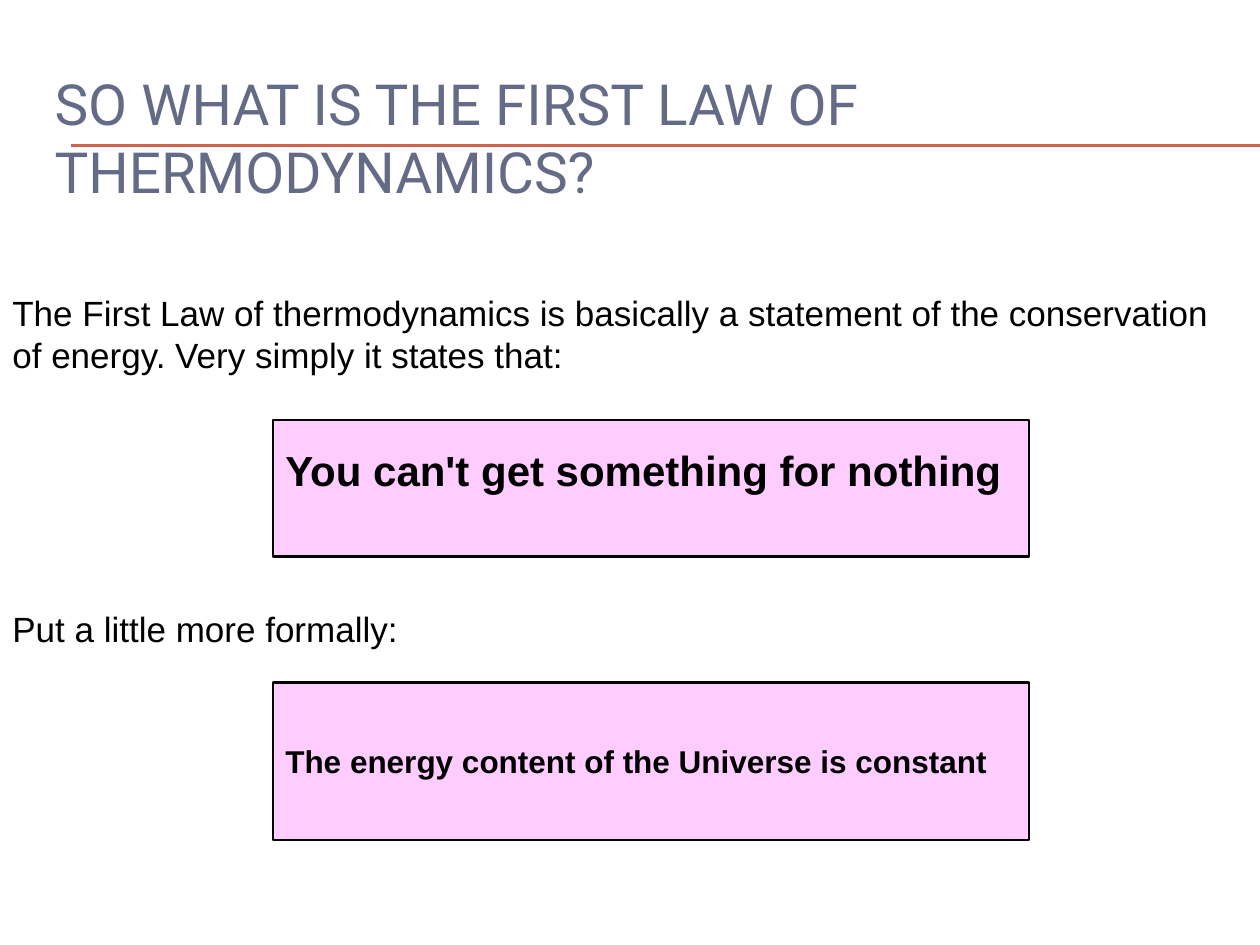
"""Build the slide on the first law of thermodynamics."""
from dataclasses import dataclass

from lxml.etree import SubElement
from pptx import Presentation
from pptx.dml.color import RGBColor
from pptx.enum.shapes import MSO_CONNECTOR, MSO_SHAPE
from pptx.enum.text import MSO_ANCHOR, MSO_AUTO_SIZE, PP_ALIGN
from pptx.oxml.ns import qn
from pptx.util import Pt


@dataclass(frozen=True)
class Theme:
    """Colours, fonts and type sizes."""
    heading: str = "646B86"
    ink: str = "000000"
    panel: str = "FFCCFF"
    rule: str = "D16349"
    heading_font: str = "Roboto"
    body_font: str = "Arial"
    heading_size: float = 32.4
    motto_size: float = 24
    body_size: float = 20
    formal_size: float = 18


def write(frame, text, *, size, color, font, bold=False, bottom=3.6):
    """Fill a text frame with one left-aligned, vertically centred paragraph."""
    frame.word_wrap = True
    frame.auto_size = MSO_AUTO_SIZE.NONE
    frame.vertical_anchor = MSO_ANCHOR.MIDDLE
    frame.margin_left = frame.margin_right = Pt(7.2)
    frame.margin_top, frame.margin_bottom = Pt(3.6), Pt(bottom)
    paragraph = frame.paragraphs[0]
    paragraph.alignment = PP_ALIGN.LEFT
    run = paragraph.add_run()
    run.text = text
    run.font.size, run.font.name, run.font.bold = Pt(size), font, bold
    run.font.color.rgb = RGBColor.from_string(color)


class SlideBuilder:
    """Hold the theme and the current slide."""

    def __init__(self, slide, theme):
        """Keep the slide and its theme."""
        self.slide, self.theme = slide, theme

    def title(self, text, left, top, width, height):
        """Place the title placeholder."""
        heading = self.slide.shapes.title
        heading.left, heading.top = Pt(left), Pt(top)
        heading.width, heading.height = Pt(width), Pt(height)
        write(heading.text_frame, text, size=self.theme.heading_size,
              color=self.theme.heading, font=self.theme.heading_font)

    def rule(self, left, right, y):
        """Draw a thin horizontal rule behind everything else."""
        shapes = self.slide.shapes
        rule = shapes.add_connector(MSO_CONNECTOR.STRAIGHT, Pt(left), Pt(y), Pt(right), Pt(y))
        rule.line.color.rgb = RGBColor.from_string(self.theme.rule)
        rule.line.width = Pt(0.75)
        SubElement(rule._element.spPr, qn("a:effectLst"))
        shapes._spTree.insert(2, rule._element)

    def panel(self, text, top, height, size, bottom=3.6):
        """Draw a framed panel with a bold statement."""
        panel = self.slide.shapes.add_shape(
            MSO_SHAPE.RECTANGLE, Pt(156), Pt(top), Pt(432), Pt(height))
        panel.shadow.inherit = False
        panel.fill.solid()
        panel.fill.fore_color.rgb = RGBColor.from_string(self.theme.panel)
        panel.line.color.rgb = RGBColor.from_string(self.theme.ink)
        panel.line.width = Pt(1.5)
        write(panel.text_frame, text, size=size, color=self.theme.ink,
              font=self.theme.body_font, bold=True, bottom=bottom)

    def passage(self, text, top, height, bottom):
        """Add a full-width passage of running text."""
        passage = self.slide.shapes.add_textbox(Pt(0), Pt(top), Pt(720), Pt(height))
        write(passage.text_frame, text, size=self.theme.body_size,
              color=self.theme.ink, font=self.theme.body_font, bottom=bottom)


def main():
    """Build and save the presentation."""
    deck = Presentation()
    deck.slide_width, deck.slide_height = Pt(720), Pt(540)
    theme = Theme()
    builder = SlideBuilder(deck.slides.add_slide(deck.slide_layouts[5]), theme)
    for y in (82.8, 83.4):
        builder.rule(40.5, 720, y)
    builder.title("SO WHAT IS THE FIRST LAW OF THERMODYNAMICS?", 24, 36, 684, 84)
    builder.panel("You can't get something for nothing", 240, 78,
                  theme.motto_size, bottom=24.3)
    builder.panel("The energy content of the Universe is constant", 390, 90,
                  theme.formal_size)
    builder.passage("The First Law of thermodynamics is basically a statement of the "
                    "conservation of energy. Very simply it states that:", 162, 78, bottom=24.3)
    builder.passage("Put a little more formally:", 318, 108.5, bottom=30)
    deck.save("out.pptx")


if __name__ == "__main__":
    main()
